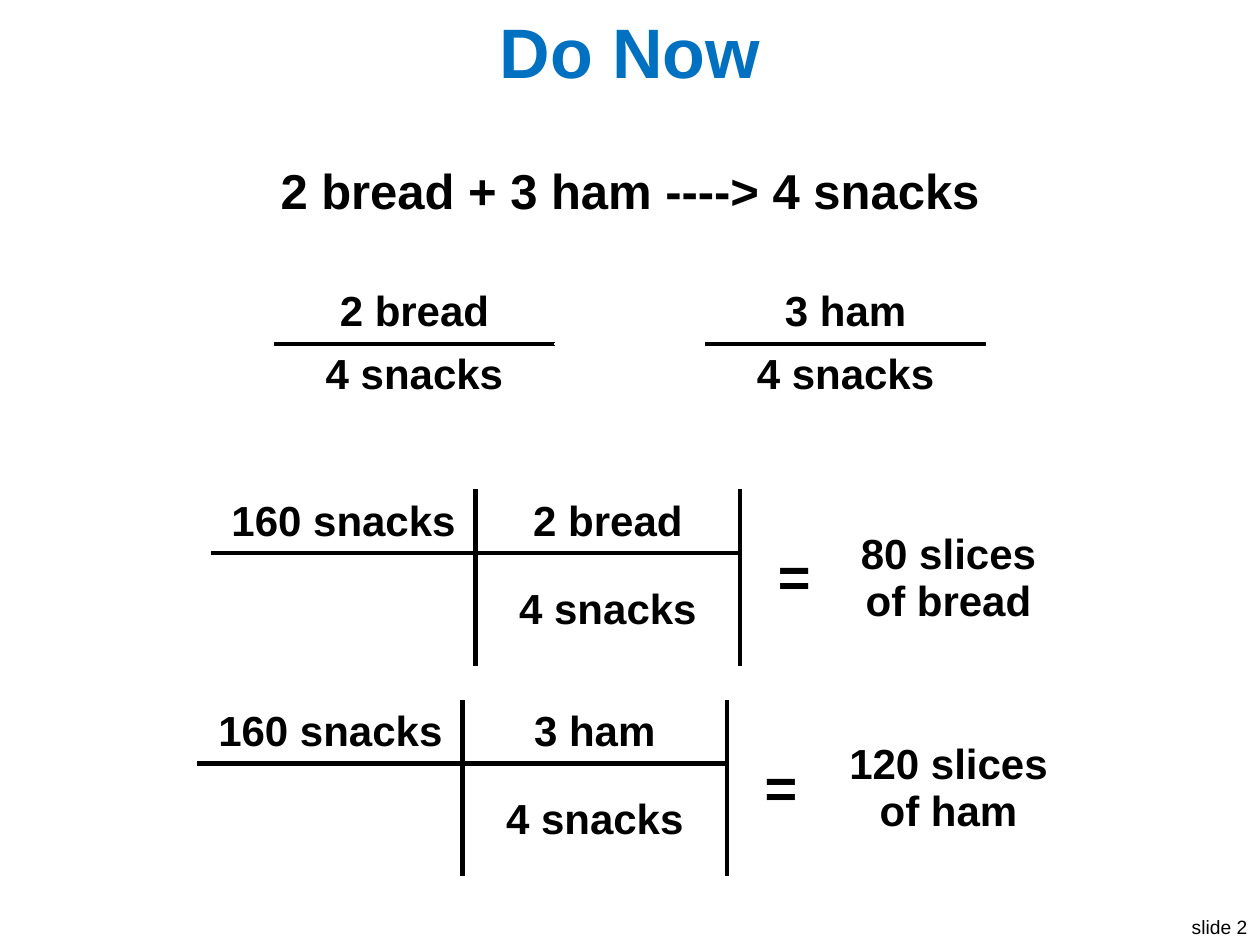
import pptx
import pptx.dml.color
import pptx.enum.text
import pptx.oxml.ns
import pptx.util
from lxml import etree

Cm, Pt = pptx.util.Cm, pptx.util.Pt
ALIGN, ANCHOR = pptx.enum.text.PP_ALIGN, pptx.enum.text.MSO_ANCHOR
SLIDE_W, SLIDE_H = 25.4, 19.05
ROW_H = 1.04
BLACK, WHITE, BLUE = "000000", "FFFFFF", "0070C0"


def rgb(value):
    """Turn a hex string into a colour."""
    return pptx.dml.color.RGBColor.from_string(value)


def add_text(tf, text, size, color=BLACK, bold=True, align=ALIGN.CENTER):
    """Write one formatted run into the first paragraph of a text frame."""
    p = tf.paragraphs[0]
    p.alignment = align
    r = p.add_run()
    r.text = text
    r.font.name = "Arial"
    r.font.size = Pt(size)
    r.font.bold = bold
    r.font.color.rgb = rgb(color)
    return p


def set_borders(cell, black_sides):
    """Rule the named sides in black and the others in white."""
    tc_pr = cell._tc.get_or_add_tcPr()
    for side in "LRTB":
        color, width = (BLACK, 3) if side in black_sides else (WHITE, 1)
        ln = etree.SubElement(tc_pr, pptx.oxml.ns.qn(f"a:ln{side}"), w=str(Pt(width)))
        fill = etree.SubElement(ln, pptx.oxml.ns.qn("a:solidFill"))
        etree.SubElement(fill, pptx.oxml.ns.qn("a:srgbClr"), val=color)


def add_grid(slide, top, widths, rows):
    """Add a centred table whose cells are (text, size, black sides)."""
    width = sum(widths)
    frame = slide.shapes.add_table(
        len(rows), len(widths), Cm((SLIDE_W - width) / 2), Cm(top),
        Cm(width), Cm(ROW_H * len(rows)))
    table = frame.table
    table.first_row = table.horz_banding = False
    for column, w in zip(table.columns, widths):
        column.width = Cm(w)
    for i, row in enumerate(rows):
        for j, (text, size, black_sides) in enumerate(row):
            cell = table.cell(i, j)
            set_borders(cell, black_sides)
            cell.fill.background()
            cell.vertical_anchor = ANCHOR.MIDDLE
            if text:
                add_text(cell.text_frame, text, size)
    return table


def add_fractions(slide, top):
    """Add the two ingredient-to-snack ratios side by side."""
    gap = ("", 24, "")
    bottom = ("4 snacks", 24, "T")
    add_grid(slide, top, [5.64, 3.05, 5.64], [
        [("2 bread", 24, "B"), gap, ("3 ham", 24, "B")],
        [bottom, gap, bottom]])


def add_conversion(slide, top, ingredient, result, result_width):
    """Add one factor-label calculation with its result."""
    table = add_grid(slide, top, [5.33, 5.33, 2.18, result_width], [
        [("160 snacks", 24, "RB"), (ingredient, 24, "LRB"),
         ("=", 32, "L"), (result, 24, "")],
        [("", 24, "RT"), ("4 snacks", 24, "LRT"), ("", 24, "L"), ("", 24, "")]])
    for j in (2, 3):
        table.cell(0, j).merge(table.cell(1, j))


def add_title(slide, left, top, width, height):
    """Place and format the title placeholder."""
    sp = slide.shapes.title
    sp.left, sp.top, sp.width, sp.height = Cm(left), Cm(top), Cm(width), Cm(height)
    tf = sp.text_frame
    tf.vertical_anchor = ANCHOR.MIDDLE
    add_text(tf, "Do Now", 40, BLUE)


def add_equation(slide, left, top, width, height):
    """Add the recipe equation."""
    tf = slide.shapes.add_textbox(Cm(left), Cm(top), Cm(width), Cm(height)).text_frame
    tf.word_wrap = True
    p = add_text(tf, "2 bread + 3 ham ----> 4 snacks", 28)
    p.space_before = Pt(12)


def add_slide_label(slide, width, height):
    """Add the slide label in the bottom right corner."""
    sp = slide.shapes.add_textbox(
        Cm(SLIDE_W - width), Cm(SLIDE_H - height), Cm(width), Cm(height))
    tf = sp.text_frame
    tf.word_wrap = False
    add_text(tf, "slide 2", 11, bold=False, align=ALIGN.RIGHT)


def main():
    """Build and save the slide."""
    prs = pptx.Presentation()
    prs.slide_width, prs.slide_height = Cm(SLIDE_W), Cm(SLIDE_H)
    s = prs.slides.add_slide(prs.slide_layouts[5])
    add_slide_label(s, 1.9, 0.73)
    add_title(s, 0.5, 0, 24.4, 2.03)
    add_equation(s, 0.5, 3.12, 24.4, 14.73)
    add_fractions(s, 5.66)
    add_conversion(s, 14.12, "3 ham", "120 slices of ham", 4.57)
    add_conversion(s, 9.88, "2 bread", "80 slices of bread", 4.04)
    prs.save("out.pptx")


if __name__ == "__main__":
    main()
